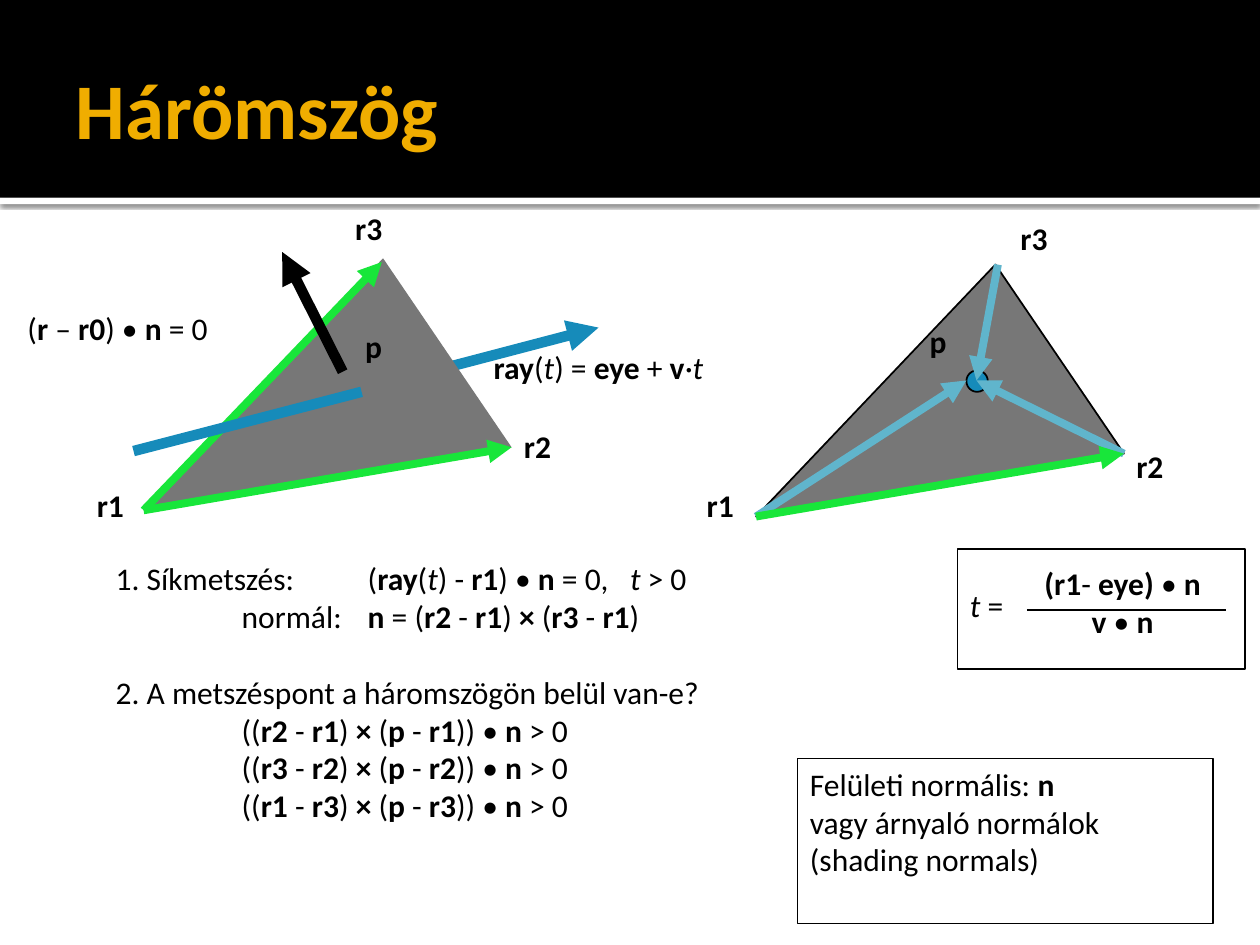
from dataclasses import dataclass

from lxml.etree import SubElement
from pptx import Presentation
from pptx.dml.color import RGBColor
from pptx.enum.shapes import MSO_CONNECTOR as Link, MSO_SHAPE as Shape
from pptx.enum.text import MSO_ANCHOR as Anchor, PP_ALIGN as Align
from pptx.oxml.ns import qn
from pptx.util import Inches, Pt


@dataclass(frozen=True)
class Theme:
    font: str = "Calibri"
    title_size: int = 45
    text_size: int = 18
    blank_line: float = 21.6
    title: str = "F0AD00"
    black: str = "000000"
    white: str = "FFFFFF"
    face: str = "777777"
    ray: str = "168BBA"
    edge: str = "18E63A"
    inner: str = "60B5CC"
    hairline: float = 1
    edge_width: float = 4.5
    ray_width: float = 6


theme = Theme()

BOLD_MARK, ITALIC_MARK = "*", "_"
TITLE = "Hárömszög"
STEPS = [
    "1. Síkmetszés: \t(*ray*(_t_) - *r1*) • *n* = 0,   _t_ > 0",
    "\tnormál: \t*n* = (*r2* - *r1*) *×* (*r3* - *r1*)",
    "2. A metszéspont a háromszögön belül van-e?",
] + [
    f"\t((*{end}* - *{start}*) *×* (*p* - *{start}*)) • *n* > 0"
    for start, end in [("r1", "r2"), ("r2", "r3"), ("r3", "r1")]
]
NORMALS = ["Felületi normális: *n*", "vagy árnyaló normálok", "(shading normals)"]
FRACTION = ["*(r1*- *eye)* • *n*", "*v* • *n*"]
LABELS = [
    ("*r1*", 0.67, 3.81, 0.52), ("*r2*", 4.06, 3.34, 0.58),
    ("*r3*", 2.72, 1.61, 0.52), ("*p*", 2.8, 2.55, 0.39),
    ("*r1*", 5.51, 3.81, 0.52), ("*r2*", 8.92, 3.5, 0.58),
    ("*r3*", 8, 1.69, 0.52), ("*p*", 7.28, 2.51, 0.39),
    ("_t_ =", 7.6, 4.6, 0.56),
    ("*ray*(_t_) = *eye* + *v*_·t_", 3.82, 2.71, 2.51),
    ("(*r* – *r0*) • *n* = 0", 0.12, 2.4, 2.24),
]
LEFT_CORNERS = [(1.14, 4.05), (3.04, 2.05), (4.06, 3.55)]
RIGHT_CORNERS = [(6, 4.1), (7.9, 2.1), (8.92, 3.6)]
RAY_BEHIND = [((1.93, 3.34), (4.75, 2.6), theme.ray, theme.ray_width, True)]
RIGHT_ARROWS = [
    ((6, 4.1), (7.67, 3.02), theme.inner, theme.edge_width, True),
    ((8.92, 3.6), (7.75, 3.02), theme.inner, theme.edge_width, True),
    ((6, 4.1), (8.92, 3.6), theme.edge, theme.edge_width, True),
    ((7.92, 2.1), (7.75, 3.02), theme.inner, theme.edge_width, True),
]
LEFT_ARROWS = [
    ((1.14, 4.05), (4.06, 3.55), theme.edge, theme.edge_width, True),
    ((1.14, 4.05), (3.03, 2.08), theme.edge, theme.edge_width, True),
    ((1.06, 3.58), (2.87, 3.11), theme.ray, theme.ray_width, False),
    ((2.72, 2.95), (2.24, 2), theme.black, theme.ray_width, True),
]
FRACTION_BAR = [((8.15, 4.84), (9.73, 4.84), theme.black, theme.hairline, False)]

deck = Presentation()
deck.slide_width, deck.slide_height = Inches(10), Inches(7.5)
slide = deck.slides.add_slide(deck.slide_layouts[5])
shapes = slide.shapes


def rgb(color):
    return RGBColor.from_string(color)


def paint(part, fill=None, line=None):
    part.shadow.inherit = False
    if fill:
        part.fill.solid()
        part.fill.fore_color.rgb = rgb(fill)
    else:
        part.fill.background()
    if line:
        part.line.color.rgb = rgb(line)
        part.line.width = Pt(theme.hairline)
    else:
        part.line.fill.background()
    return part


def preset(kind, box, fill=None, line=None):
    return paint(shapes.add_shape(kind, *map(Inches, box)), fill, line)


def triangle(corners, line=None):
    points = [(Inches(x), Inches(y)) for x, y in corners]
    outline = shapes.build_freeform(*points[0])
    outline.add_line_segments(points[1:], close=True)
    paint(outline.convert_to_shape(), theme.face, line)


def draw_lines(lines):
    for start, end, color, width, arrow in lines:
        link = shapes.add_connector(Link.STRAIGHT, *map(Inches, start + end))
        link.line.color.rgb = rgb(color)
        link.line.width = Pt(width)
        if arrow:
            SubElement(link.line._get_or_add_ln(), qn("a:tailEnd"), type="triangle")
        SubElement(link._element.spPr, qn("a:effectLst"))


def add_runs(paragraph, marked):
    for i, phrase in enumerate(marked.split(BOLD_MARK)):
        for j, words in enumerate(phrase.split(ITALIC_MARK)):
            if words:
                run = paragraph.add_run()
                run.text = words
                run.font.bold, run.font.italic = i % 2 == 1, j % 2 == 1


def write(lines, box, align=Align.LEFT):
    holder = shapes.add_textbox(*map(Inches, box))
    frame = holder.text_frame
    frame.word_wrap = True
    for i, marked in enumerate(lines):
        paragraph = frame.add_paragraph() if i else frame.paragraphs[0]
        paragraph.alignment = align
        paragraph.font.name = theme.font
        paragraph.font.size = Pt(theme.text_size)
        paragraph.font.color.rgb = rgb(theme.black)
        add_runs(paragraph, marked)
    return holder


def set_tabs(paragraph, stops):
    properties = paragraph._p.get_or_add_pPr()
    tabs = properties.makeelement(qn("a:tabLst"))
    for stop in stops:
        SubElement(tabs, qn("a:tab"), pos=str(Inches(stop)), algn="l")
    properties.find(qn("a:defRPr")).addprevious(tabs)


rule = preset(Shape.RECTANGLE, (0, 1.57, 10, 0.05), theme.white)
effects = rule._element.spPr.find(qn("a:effectLst"))
shade = SubElement(effects, qn("a:outerShdw"), blurRad=str(Pt(2.5)),
                   dist=str(Pt(0.8)), dir="5400000", algn="tl", rotWithShape="0")
shade_color = SubElement(shade, qn("a:srgbClr"), val=theme.black)
SubElement(shade_color, qn("a:alpha"), val="60000")
banner = preset(Shape.RECTANGLE, (0, 0, 10, 1.57), theme.black)

heading = shapes.title
banner._element.addnext(heading._element)
heading.left, heading.top, heading.width, heading.height = map(
    Inches, (0.5, 0.17, 9, 1.37))
heading.text_frame.text = TITLE
heading.text_frame.vertical_anchor = Anchor.MIDDLE
heading.text_frame.margin_right = Inches(0.05)
heading_line = heading.text_frame.paragraphs[0]
heading_line.alignment = Align.LEFT
heading_line.font.name = theme.font
heading_line.font.size = Pt(theme.title_size)
heading_line.font.bold = True
heading_line.font.color.rgb = rgb(theme.title)

draw_lines(RAY_BEHIND)
triangle(RIGHT_CORNERS, theme.black)
preset(Shape.OVAL, (7.67, 2.94, 0.17, 0.17), theme.ray, theme.black)
draw_lines(RIGHT_ARROWS)
triangle(LEFT_CORNERS)
draw_lines(LEFT_ARROWS)

steps = write(STEPS, (0.82, 4.39, 6.78, 2.9))
steps.text_frame.paragraphs[2].space_before = Pt(theme.blank_line)
for step in steps.text_frame.paragraphs:
    set_tabs(step, (1, 2))
normals = write(NORMALS, (6.33, 6.02, 3.3, 1.31))
normals.line.color.rgb = rgb(theme.black)
normals.line.width = Pt(theme.hairline)
for label, left, top, width in LABELS:
    write([label], (left, top, width, 0.5))
write(FRACTION, (7.86, 4.43, 2.1, 0.9), Align.CENTER)
draw_lines(FRACTION_BAR)
preset(Shape.RECTANGLE, (7.6, 4.36, 2.28, 0.95), line=theme.black)

deck.save("out.pptx")
